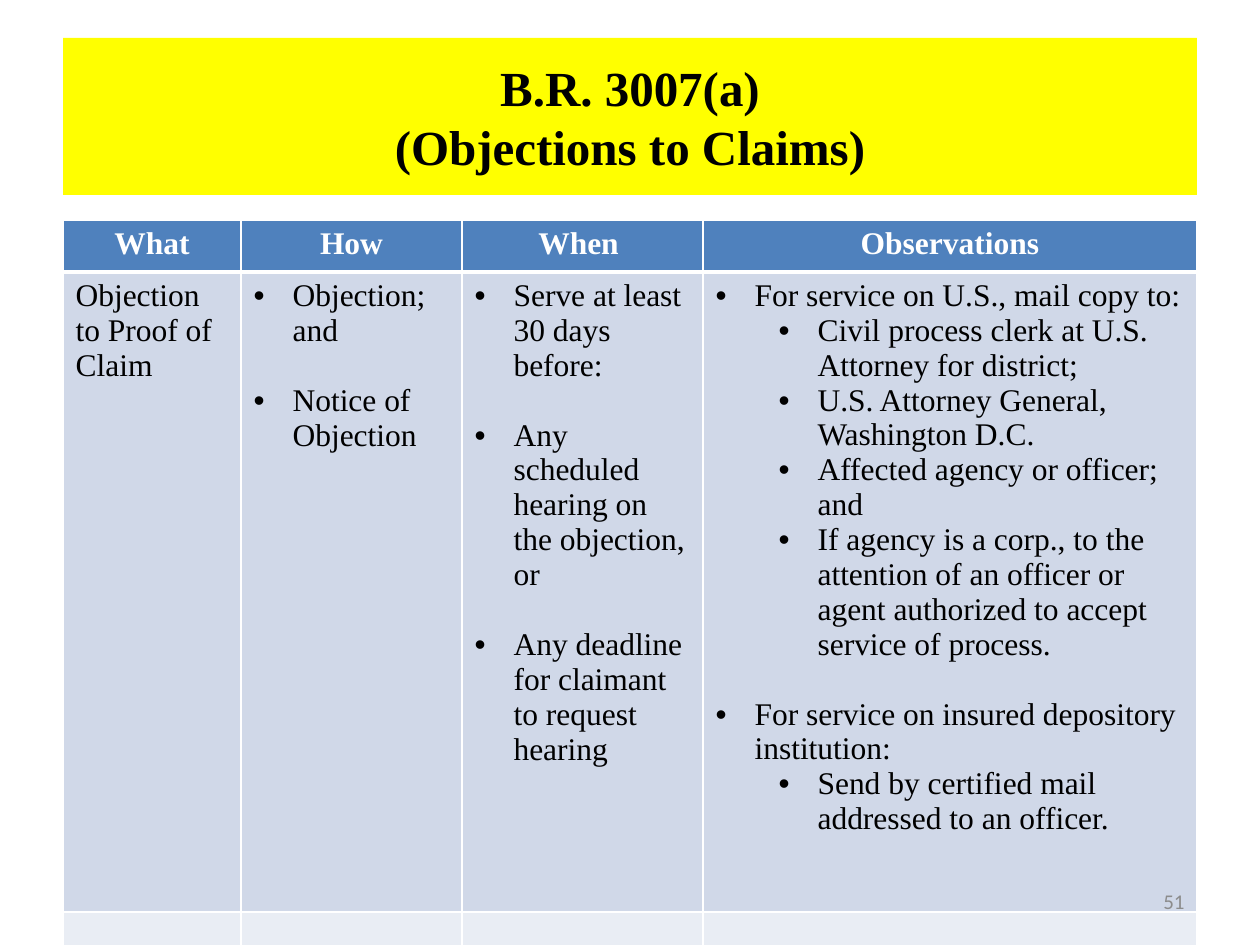
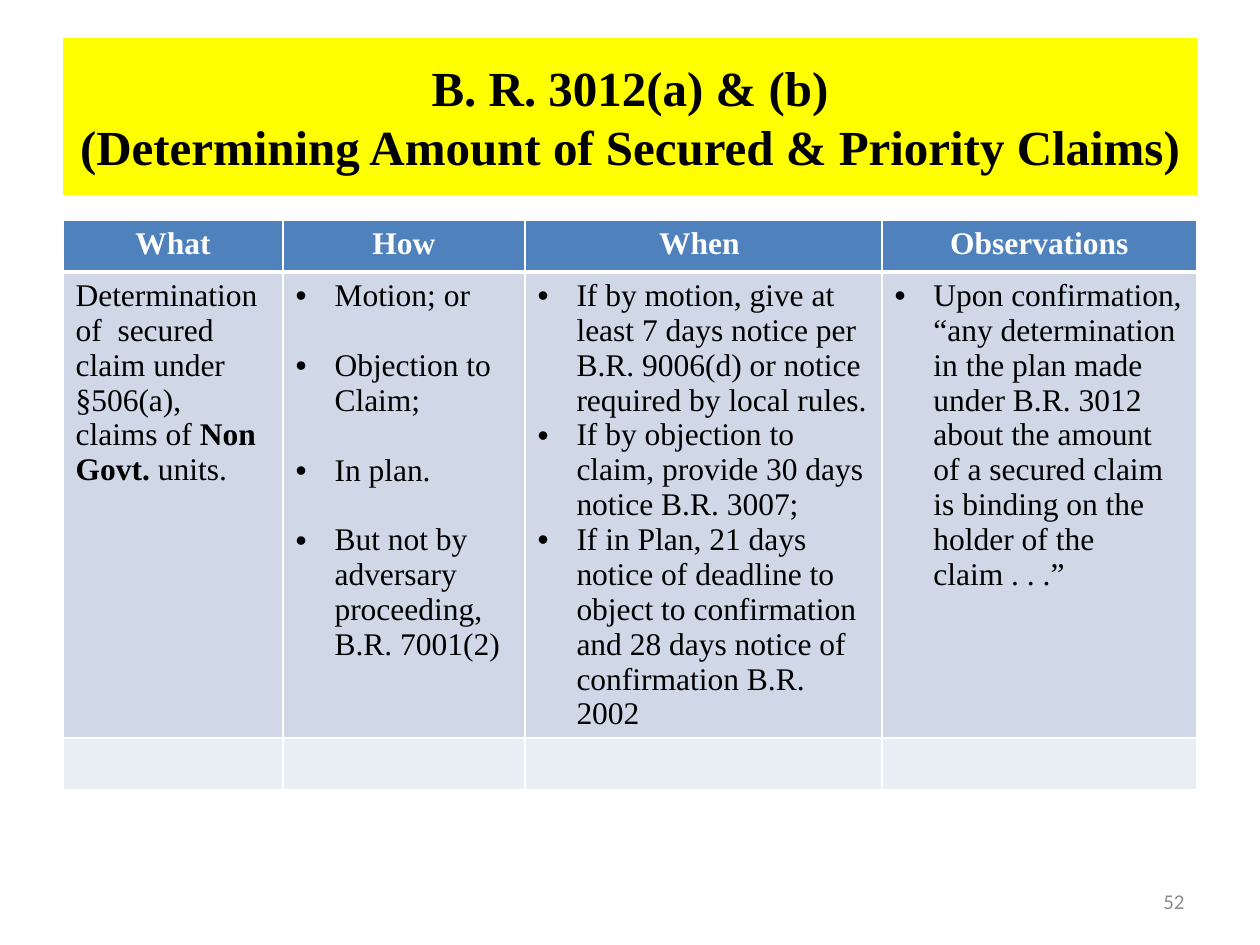
from lxml.etree import SubElement
from pptx import Presentation
from pptx.dml.color import RGBColor
from pptx.enum.text import MSO_ANCHOR as ANCHOR, MSO_AUTO_SIZE as AUTOSIZE, PP_ALIGN as ALIGN
from pptx.oxml.ns import qn
from pptx.util import Emu, Pt

PX_PER_INCH = 126
COLORS = {
    "band": "FFFF00", "text": "000000", "white": "FFFFFF", "header": "4F81BD",
    "body": "D0D8E8", "spare": "E9EDF4", "number": "8C8C8C",
}
SERIF, SANS = "Times New Roman", "Calibri"
TITLE_BOX = (63, 38, 1134, 157)
NUMBER_BOX = (903, 876, 294, 50)
TABLE_LEFT, TABLE_TOP, ROW_H = 63, 220, 52
INDENT, LEVEL_STEP = 39, 63
GAP = 20  # points, one line of body text
HEADINGS = ["What", "How", "When ", "Observations"]


def px(n):
    return Emu(round(n * 914400 / PX_PER_INCH))


def rgb(name):
    return RGBColor.from_string(COLORS[name])


def add_text(p, text, size=18, font=SERIF, color="text", bold=False, align=None):
    r = p.add_run()
    r.text = text
    f = r.font
    f.size, f.name, f.bold = Pt(size), font, bold
    f.color.rgb = rgb(color)
    if align is not None:
        p.alignment = align


def item(text, level=0, gap=False):
    """Describe one bullet; gap leaves a line's space above it."""
    return {"text": text, "level": level, "gap": gap}


def add_bullet(p, text, level, gap):
    p.level = level
    pPr = p._p.get_or_add_pPr()
    pPr.set("marL", str(px(INDENT + level * LEVEL_STEP)))
    pPr.set("indent", str(-px(INDENT)))
    if gap:
        p.space_before = Pt(GAP)
    SubElement(pPr, qn("a:buFont"), typeface="Arial")
    SubElement(pPr, qn("a:buChar"), char="•")
    add_text(p, text)


def set_borders(cell, top=1, bottom=1):
    tcPr = cell._tc.get_or_add_tcPr()
    for side, width in zip("LRTB", (1, 1, top, bottom)):
        ln = SubElement(tcPr, qn(f"a:ln{side}"), w=str(Pt(width)))
        fill = SubElement(ln, qn("a:solidFill"))
        SubElement(fill, qn("a:srgbClr"), val=COLORS["white"])


def paint(cell, color, **borders):
    set_borders(cell, **borders)
    cell.fill.solid()
    cell.fill.fore_color.rgb = rgb(color)


def add_title(s, box, lines):
    sp = s.shapes.title
    sp.left, sp.top, sp.width, sp.height = map(px, box)
    sp.fill.solid()
    sp.fill.fore_color.rgb = rgb("band")
    tf = sp.text_frame
    tf.auto_size, tf.vertical_anchor = AUTOSIZE.NONE, ANCHOR.MIDDLE
    p = tf.paragraphs[0]
    for i, line in enumerate(lines):
        if i:
            p.add_line_break()
            br = p._p.findall(qn("a:br"))[-1]
            SubElement(br, qn("a:rPr"), sz="2800")
        add_text(p, line, size=28, bold=True, align=ALIGN.CENTER)


def add_rule_table(s, left, top, widths, body_h, subject, lists):
    """Lay out the headings, the rule's row and a spare row."""
    heights = [ROW_H, body_h, ROW_H]
    table = s.shapes.add_table(3, len(widths), px(left), px(top),
                               px(sum(widths)), px(sum(heights))).table
    for col, w in zip(table.columns, widths):
        col.width = px(w)
    for row, h in zip(table.rows, heights):
        row.height = px(h)
    for c, heading in enumerate(HEADINGS):
        head, body, spare = (table.cell(r, c) for r in range(3))
        paint(head, "header", bottom=3)
        paint(body, "body", top=3)
        paint(spare, "spare")
        add_text(head.text_frame.paragraphs[0], heading,
                 color="white", bold=True, align=ALIGN.CENTER)
    p = table.cell(1, 0).text_frame.paragraphs[0]
    for text, bold in subject:
        add_text(p, text, bold=bold)
    for c, bullets in enumerate(lists, 1):
        tf = table.cell(1, c).text_frame
        for i, bullet in enumerate(bullets):
            add_bullet(tf.add_paragraph() if i else tf.paragraphs[0], **bullet)


def add_number(s, box, number):
    tf = s.shapes.add_textbox(*map(px, box)).text_frame
    tf.word_wrap, tf.vertical_anchor = True, ANCHOR.MIDDLE
    add_text(tf.paragraphs[0], str(number), size=12, font=SANS,
             color="number", align=ALIGN.RIGHT)


def add_rule_slide(prs, number, title, **table):
    s = prs.slides.add_slide(prs.slide_layouts[5])
    add_title(s, TITLE_BOX, title)
    add_rule_table(s, TABLE_LEFT, TABLE_TOP, **table)
    add_number(s, NUMBER_BOX, number)


def main():
    prs = Presentation()
    prs.slide_width, prs.slide_height = px(1260), px(945)
    add_rule_slide(
        prs, 51, ["B.R. 3007(a)", "(Objections to Claims)"],
        widths=[178, 221, 241, 494], body_h=640,
        subject=[("Objection to Proof of Claim", False)],
        lists=[
            [item("Objection; and"), item("Notice of Objection", gap=True)],
            [item("Serve at least 30 days before:"),
             item("Any scheduled hearing on the objection, or", gap=True),
             item("Any deadline for claimant to request hearing", gap=True)],
            [item("For service on U.S., mail copy to:"),
             item("Civil process clerk at U.S. Attorney for district;", 1),
             item("U.S. Attorney General, Washington D.C.", 1),
             item("Affected agency or officer; and", 1),
             item("If agency is a corp., to the attention of an officer or agent "
                  "authorized to accept service of process.", 1),
             item("For service on insured depository institution:", gap=True),
             item("Send by certified mail addressed to an officer.", 1)],
        ])
    add_rule_slide(
        prs, 52, ["B. R. 3012(a) & (b)",
                  "(Determining Amount of Secured & Priority Claims)"],
        widths=[220, 242, 357, 315], body_h=466,
        subject=[("Determination of  secured claim under §506(a), claims of ", False),
                 ("Non Govt. ", True), ("units.", False)],
        lists=[
            [item("Motion; or"), item("Objection to Claim;", gap=True),
             item("In plan.", gap=True),
             item("But not by adversary proceeding, B.R. 7001(2)", gap=True)],
            [item("If by motion, give at least 7 days notice per B.R. 9006(d) "
                  "or notice required by local rules."),
             item("If by objection to claim, provide 30 days notice B.R. 3007;"),
             item("If in Plan, 21 days notice of deadline to object to confirmation "
                  "and 28 days notice of confirmation B.R. 2002")],
            [item("Upon confirmation, “any determination in the plan made under "
                  "B.R. 3012 about the amount of a secured claim is binding on "
                  "the holder of the claim . . .”")],
        ])
    prs.save("out.pptx")


if __name__ == "__main__":
    main()
